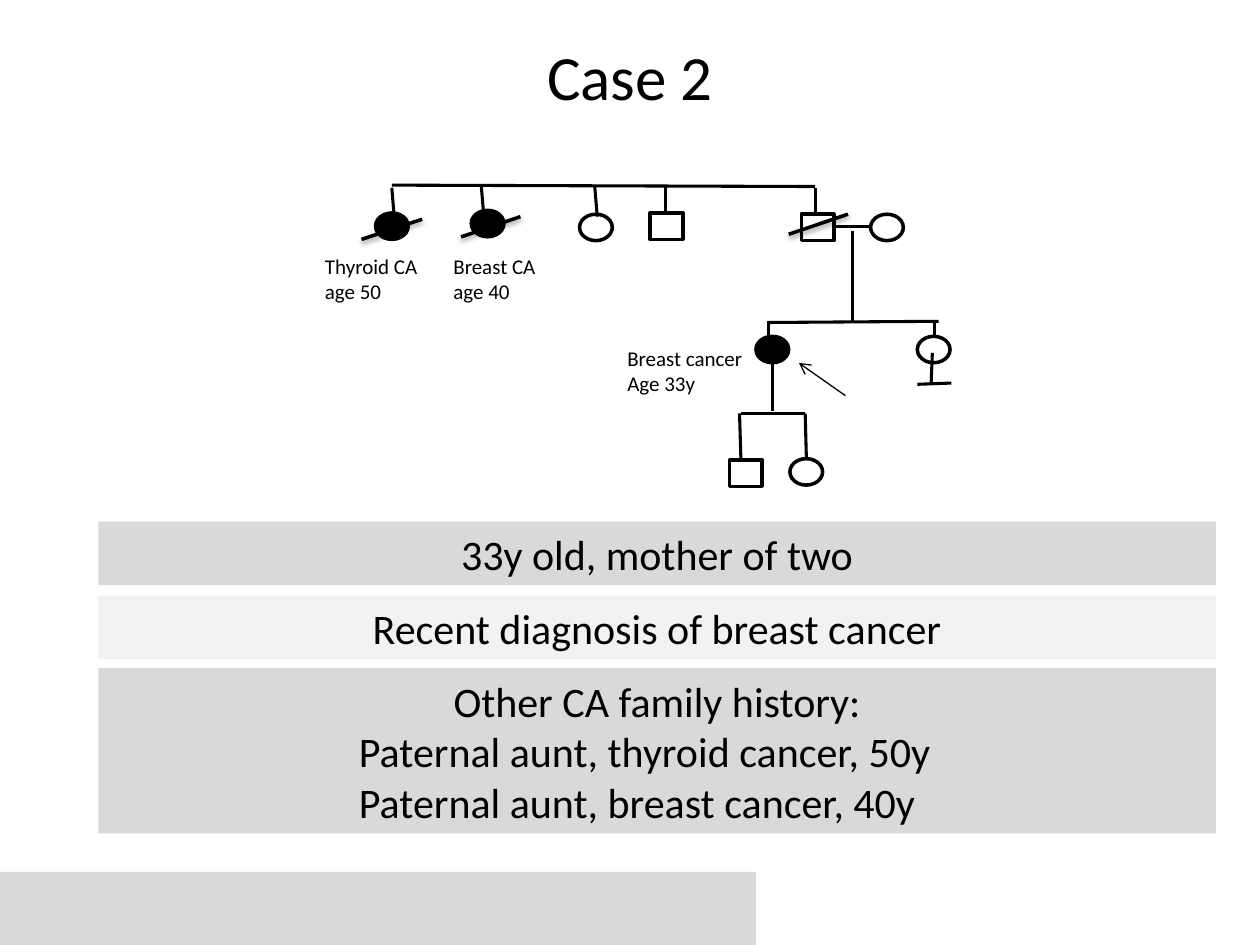
from lxml.etree import SubElement
from pptx import Presentation
from pptx.dml.color import RGBColor
from pptx.enum.shapes import MSO_CONNECTOR, MSO_SHAPE
from pptx.enum.text import MSO_ANCHOR, PP_ALIGN
from pptx.oxml.ns import qn
from pptx.util import Pt

BLACK = RGBColor(0x00, 0x00, 0x00)
WHITE = RGBColor(0xFF, 0xFF, 0xFF)
GRAY = RGBColor(0xD9, 0xD9, 0xD9)
LIGHT_GRAY = RGBColor(0xF2, 0xF2, 0xF2)
FONT = "Calibri"
SYMBOL_WIDTH, SYMBOL_HEIGHT = 18.7, 15.1

presentation = Presentation()
presentation.slide_width, presentation.slide_height = Pt(720), Pt(540)
slide = presentation.slides.add_slide(presentation.slide_layouts[5])


def add_line(x1, y1, x2, y2, width):
    """Draw a black line and return it with its empty effect list."""
    line = slide.shapes.add_connector(
        MSO_CONNECTOR.STRAIGHT, Pt(x1), Pt(y1), Pt(x2), Pt(y2))
    line.line.color.rgb = BLACK
    line.line.width = Pt(width)
    effects = SubElement(line._element.spPr, qn("a:effectLst"))
    return line, effects


def write_text(frame, lines, size, alignment):
    frame.word_wrap = True
    frame.text = "\n".join(lines)
    for paragraph in frame.paragraphs:
        paragraph.alignment = alignment
        paragraph.font.name = FONT
        paragraph.font.size = Pt(size)
        paragraph.font.color.rgb = BLACK


# Title
title = slide.shapes.title
title.left, title.top, title.width, title.height = Pt(36), Pt(-2.2), Pt(648), Pt(90)
title.text_frame.vertical_anchor = MSO_ANCHOR.MIDDLE
write_text(title.text_frame, ["Case 2"], 36, PP_ALIGN.CENTER)

# Footer bar
footer_bar = slide.shapes.add_shape(MSO_SHAPE.RECTANGLE, 0, Pt(498.2), Pt(432), Pt(41.8))
footer_bar.shadow.inherit = False
footer_bar.fill.solid()
footer_bar.fill.fore_color.rgb = GRAY
footer_bar.line.fill.background()

# Family members: squares are men, circles are women, black means affected
MAN, WOMAN = MSO_SHAPE.RECTANGLE, MSO_SHAPE.OVAL
members = [
    (WOMAN, 214.6, 121.7, BLACK),
    (WOMAN, 269.3, 120.2, BLACK),
    (WOMAN, 331.2, 122.4, WHITE),
    (MAN, 371.5, 121.7, WHITE),
    (MAN, 457.9, 122.4, WHITE),
    (WOMAN, 497.5, 122.4, WHITE),
    (WOMAN, 432, 192.2, BLACK),
    (WOMAN, 524.2, 192.2, WHITE),
    (MAN, 416.9, 262.8, WHITE),
    (WOMAN, 451.4, 262.1, WHITE),
]
for kind, left, top, color in members:
    member = slide.shapes.add_shape(
        kind, Pt(left), Pt(top), Pt(SYMBOL_WIDTH), Pt(SYMBOL_HEIGHT))
    member.shadow.inherit = False
    member.fill.solid()
    member.fill.fore_color.rgb = color
    member.line.color.rgb = BLACK
    member.line.width = Pt(2)

# Family lines
family_lines = [
    # Siblings of the father
    (223.9, 105.8, 465.8, 106.6),
    (223.9, 107.3, 225.4, 125.3),
    (275, 105.8, 276.5, 123.8),
    (339.8, 105.8, 341.3, 123.8),
    (380.2, 106.6, 380.2, 122.4),
    (465.8, 107.3, 465.8, 122.4),
    # Parents and their daughters
    (477.4, 129.6, 497.5, 129.6),
    (487.4, 131.8, 487.4, 183.6),
    (439.2, 184.3, 536.4, 183.6),
    (439.2, 183.6, 439.2, 192.2),
    (534.2, 184.3, 534.2, 192.2),
    # No children
    (532.8, 201.6, 532.1, 218.9),
    (524.2, 219.6, 543.6, 218.9),
    # Children of the patient
    (441.4, 207.4, 441.4, 234.7),
    (423.4, 236.2, 460.1, 236.2),
    (422.6, 236.2, 423.4, 262.8),
    (460.1, 236.2, 460.8, 262.1),
]
for ends in family_lines:
    add_line(*ends, 1.75)

# Slashes across the deceased, with a soft shadow
slashes = [
    (206.6, 136.8, 241.2, 125.3),
    (263.5, 135.4, 297.4, 123.8),
    (450.7, 133.9, 484.6, 122.4),
]
for ends in slashes:
    slash, effects = add_line(*ends, 2)
    shadow = SubElement(effects, qn("a:outerShdw"), blurRad=str(Pt(3.1)),
                        dist=str(Pt(1.6)), dir="5400000", rotWithShape="0")
    shadow_color = SubElement(shadow, qn("a:srgbClr"), val=str(BLACK))
    SubElement(shadow_color, qn("a:alpha"), val="38000")

# Arrow to the patient
arrow, effects = add_line(483.1, 226.1, 456.5, 207.4, 0.75)
SubElement(arrow.line._get_or_add_ln(), qn("a:tailEnd"), type="arrow")

# Diagnosis labels
labels = [
    (178.6, 141.1, 72.7, ["Thyroid CA age 50"]),
    (252, 141.1, 72.7, ["Breast CA age 40"]),
    (351.4, 193.7, 82.1, ["Breast cancer", "Age 33y"]),
]
for left, top, width, lines in labels:
    label = slide.shapes.add_textbox(Pt(left), Pt(top), Pt(width), Pt(36))
    write_text(label.text_frame, lines, 12, PP_ALIGN.LEFT)

# Case history bands
bands = [
    (298.1, 36.3, GRAY, ["33y old, mother of two"]),
    (340.3, 36.3, LIGHT_GRAY, ["Recent diagnosis of breast cancer"]),
    (381.8, 94.5, GRAY, ["Other CA family history:",
                         "Paternal aunt, thyroid cancer, 50y",
                         "Paternal aunt, breast cancer, 40y"]),
]
for top, height, color, lines in bands:
    band = slide.shapes.add_shape(
        MSO_SHAPE.RECTANGLE, Pt(56.2), Pt(top), Pt(638.6), Pt(height))
    band.shadow.inherit = False
    band.fill.solid()
    band.fill.fore_color.rgb = color
    band.line.fill.background()
    band.text_frame.vertical_anchor = MSO_ANCHOR.MIDDLE
    write_text(band.text_frame, lines, 24, PP_ALIGN.CENTER)
    for paragraph in band.text_frame.paragraphs[1:]:
        paragraph.alignment = PP_ALIGN.LEFT
        paragraph._p.get_or_add_pPr().set("indent", str(Pt(141.8)))

presentation.save("out.pptx")
